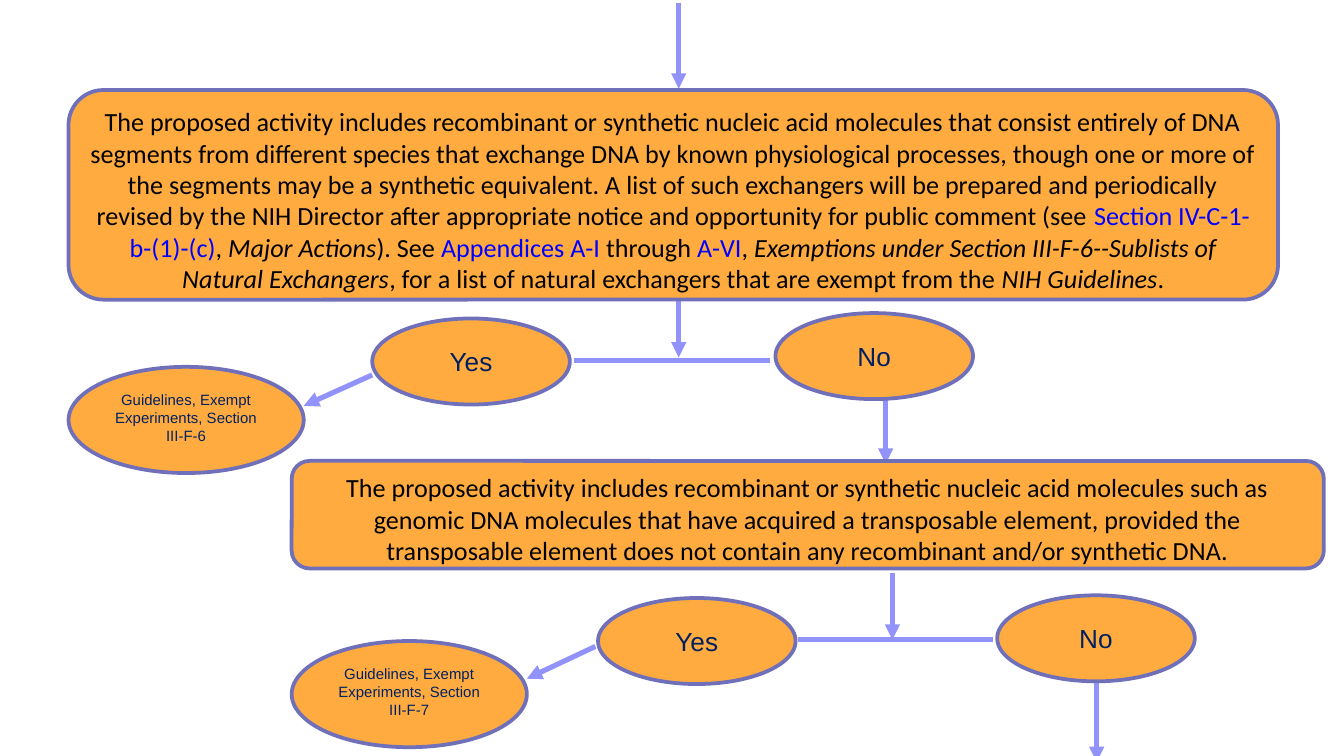
from lxml.etree import SubElement
from pptx import Presentation
from pptx.dml.color import RGBColor
from pptx.enum.shapes import MSO_CONNECTOR, MSO_SHAPE
from pptx.enum.text import MSO_ANCHOR, PP_ALIGN
from pptx.oxml.ns import qn
from pptx.util import Inches, Pt

ORANGE = RGBColor(0xFF, 0xAB, 0x40)
OUTLINE = RGBColor(0x6F, 0x6F, 0xBA)
ARROW = RGBColor(0x92, 0x92, 0xFB)
BLACK = RGBColor(0, 0, 0)
BLUE = RGBColor(0, 0, 0xFF)
NAVY = RGBColor(0, 0x20, 0x60)

# Content: runs are (text, style), where style is "", "ref" or "italic"
EXCHANGERS = [
    ("The proposed activity includes recombinant or synthetic nucleic acid molecules "
     "that consist entirely of DNA segments from different species that exchange DNA by "
     "known physiological processes, though one or more of the segments may be a "
     "synthetic equivalent. A list of such exchangers will be prepared and periodically "
     "revised by the NIH Director after appropriate notice and opportunity for public "
     "comment (see ", ""),
    ("Section IV-C-1-b-(1)-(c)", "ref"),
    (", ", ""),
    ("Major Actions", "italic"),
    ("). See ", ""),
    ("Appendices A-I ", "ref"),
    ("through ", ""),
    ("A-VI", "ref"),
    (", ", ""),
    ("Exemptions under Section III-F-6--Sublists of Natural Exchangers", "italic"),
    (", for a list of natural exchangers that are exempt from the ", ""),
    ("NIH Guidelines", "italic"),
    (".", ""),
]
TRANSPOSABLE = [
    ("The proposed activity includes recombinant or synthetic nucleic acid molecules "
     "such as genomic DNA molecules that have acquired a transposable element, provided "
     "the transposable element does not contain any recombinant and/or synthetic DNA.", ""),
]
GUIDELINES = "Guidelines, Exempt Experiments, Section "

# Each criterion: (left, top, width, height), runs
CRITERIA = [
    ((0.51, 0.67, 9, 1.56), EXCHANGERS),
    ((2.17, 3.43, 7.68, 0.8), TRANSPOSABLE),
]
# Each ellipse: text, left, top
ANSWERS = [("Yes", 2.77, 2.37), ("No", 5.77, 2.33), ("Yes", 4.45, 4.45), ("No", 7.42, 4.43)]
OUTCOMES = [("III-F-6", 0.51, 2.73), ("III-F-7", 2.17, 4.77)]
ANSWER_SIZE = (1.47, 0.64)
OUTCOME_SIZE = (1.75, 0.79)

# Flow lines: x1, y1, x2, y2
ARROWS = [
    (5.05, 0.02, 5.05, 0.66),
    (5.05, 2.23, 5.05, 2.66),
    (2.77, 2.79, 2.26, 3.02),
    (6.59, 2.97, 6.59, 3.45),
    (6.64, 4.26, 6.64, 4.76),
    (4.43, 4.81, 3.92, 5.05),
    (8.16, 5.08, 8.16, 5.67),
]
BRANCHES = [(4.27, 2.68, 5.73, 2.68), (5.94, 4.76, 7.39, 4.76)]


def add_node(kind, box, runs, font_name, size, color, anchor, bottom=0.04):
    node = slide.shapes.add_shape(kind, *map(Inches, box))
    node.shadow.inherit = False
    node.fill.solid()
    node.fill.fore_color.rgb = ORANGE
    node.line.color.rgb = OUTLINE
    node.line.width = Pt(2)
    frame = node.text_frame
    frame.word_wrap = True
    frame.vertical_anchor = anchor
    frame.margin_left = frame.margin_right = Inches(0.07)
    frame.margin_top, frame.margin_bottom = Inches(0.04), Inches(bottom)
    paragraph = frame.paragraphs[0]
    paragraph.alignment = PP_ALIGN.CENTER
    for text, style in runs:
        run = paragraph.add_run()
        run.text = text
        run.font.name = font_name
        run.font.size = Pt(size)
        run.font.italic = style == "italic"
        run.font.color.rgb = BLUE if style == "ref" else color


def add_flow(ends, arrowhead):
    flow = slide.shapes.add_connector(MSO_CONNECTOR.STRAIGHT, *map(Inches, ends))
    flow.line.color.rgb = ARROW
    flow.line.width = Pt(2.75)
    if arrowhead:
        SubElement(flow.line._get_or_add_ln(), qn("a:tailEnd"), type="triangle")
    SubElement(flow._element.spPr, qn("a:effectLst"))


# A 16:9 slide
prs = Presentation()
prs.slide_width = Inches(10)
prs.slide_height = prs.slide_width * 9 // 16
slide = prs.slides.add_slide(prs.slide_layouts[6])

# Flow lines lie behind the nodes
for ends in ARROWS:
    add_flow(ends, True)
for ends in BRANCHES:
    add_flow(ends, False)

# Criteria, answers and outcomes
for box, runs in CRITERIA:
    add_node(MSO_SHAPE.ROUNDED_RECTANGLE, box, runs, "Calibri", 14, BLACK, MSO_ANCHOR.TOP)
for answer, left, top in ANSWERS:
    add_node(MSO_SHAPE.OVAL, (left, top, *ANSWER_SIZE), [(answer, "")],
             "Arial", 14, NAVY, MSO_ANCHOR.MIDDLE)
for section, left, top in OUTCOMES:
    add_node(MSO_SHAPE.OVAL, (left, top, *OUTCOME_SIZE), [(GUIDELINES + section, "")],
             "Arial", 8, NAVY, MSO_ANCHOR.MIDDLE, bottom=0.08)

prs.save("out.pptx")
